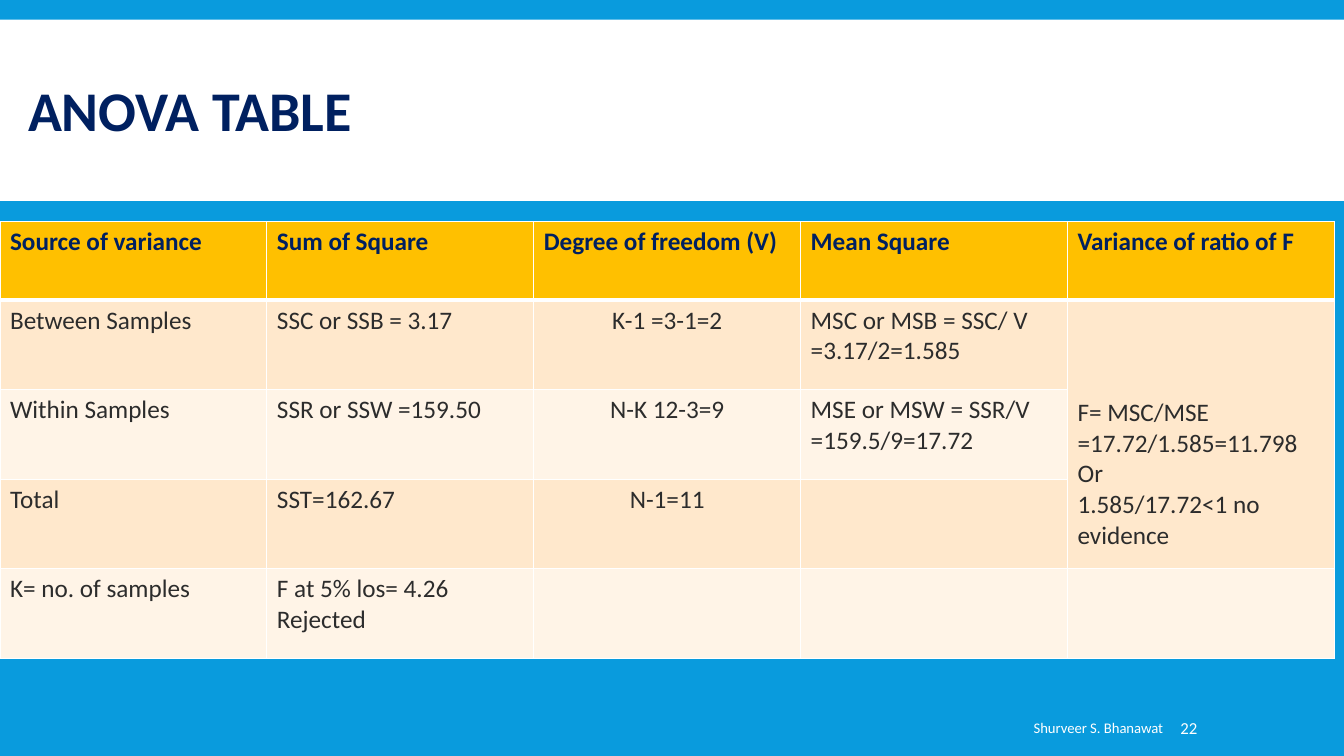
from lxml import etree
from pptx import Presentation
from pptx import util as u
from pptx.dml import color
from pptx.enum import shapes, text
from pptx.oxml import ns

Pt = u.Pt
LEFT, MID, RIGHT = text.PP_ALIGN.LEFT, text.PP_ALIGN.CENTER, text.PP_ALIGN.RIGHT

HEAD = ["Source of variance", "Sum of Square", "Degree of freedom (V)",
        "Mean Square", "Variance of ratio of F"]
BODY = [
    ["Between Samples", "SSC or SSB = 3.17", "K-1 =3-1=2",
     "MSC or MSB = SSC/ V\n=3.17/2=1.585",
     "F= MSC/MSE\n=17.72/1.585=11.798\nOr\n1.585/17.72<1 no evidence"],
    ["Within Samples", "SSR or SSW =159.50", "N-K 12-3=9",
     "MSE or MSW = SSR/V\n=159.5/9=17.72", ""],
    ["Total", "SST=162.67", "N-1=11", "", ""],
    ["K= no. of samples", "F at 5% los= 4.26 Rejected", "", "", ""],
]


def rgb(code):
    return color.RGBColor.from_string(code)


def write(frame, words, size=18, ink="2C2C2C", bold=False, align=LEFT, lead=None):
    """Fill a text frame, one paragraph per line of words."""
    frame.word_wrap = True
    for i, line in enumerate(words.split("\n")):
        para = frame.add_paragraph() if i else frame.paragraphs[0]
        para.alignment = align
        if lead:
            para.line_spacing = lead
        run = para.add_run() if line else para
        if line:
            run.text = line
        font = run.font
        font.name, font.size, font.bold = "Calibri", Pt(size), bold
        font.color.rgb = rgb(ink)


def edge(cell, base):
    """Draw white borders around a cell, the bottom one of width base."""
    props = cell._tc.get_or_add_tcPr()
    sides = [("lnL", 1), ("lnR", 1), ("lnT", 1), ("lnB", base)]
    for i, (tag, width) in enumerate(sides):
        line = etree.Element(ns.qn("a:" + tag), w=str(Pt(width)))
        fill = etree.SubElement(line, ns.qn("a:solidFill"))
        etree.SubElement(fill, ns.qn("a:srgbClr"), val="FFFFFF")
        props.insert(i, line)


class Deck:
    def __init__(self, back):
        self.file = Presentation()
        self.file.slide_width, self.file.slide_height = Pt(960), Pt(540)
        self.slide = self.file.slides.add_slide(self.file.slide_layouts[6])
        fill = self.slide.background.fill
        fill.solid()
        fill.fore_color.rgb = rgb(back)

    def band(self, x, y, w, h, code):
        band = self.slide.shapes.add_shape(
            shapes.MSO_SHAPE.RECTANGLE, Pt(x), Pt(y), Pt(w), Pt(h))
        band.shadow.inherit = False
        band.fill.solid()
        band.fill.fore_color.rgb = rgb(code)
        band.line.fill.background()

    def label(self, x, y, w, h, words, inset=7.2, **look):
        frame = self.slide.shapes.add_textbox(Pt(x), Pt(y), Pt(w), Pt(h)).text_frame
        frame.vertical_anchor = text.MSO_ANCHOR.MIDDLE
        frame.margin_left = Pt(inset)
        write(frame, words, **look)

    def table(self, x, y, wide, tall, rows):
        """Place a table with one column width and a list of row heights."""
        grid = self.slide.shapes.add_table(
            len(rows), len(rows[0]), Pt(x), Pt(y),
            Pt(wide * len(rows[0])), Pt(sum(tall))).table
        for col in grid.columns:
            col.width = Pt(wide)
        for r, row in enumerate(rows):
            grid.rows[r].height = Pt(tall[r])
            for c, words in enumerate(row):
                cell = grid.cell(r, c)
                cell.fill.solid()
                tint = "FFC000" if r == 0 else ("FFF4E7", "FFE8CC")[r % 2]
                cell.fill.fore_color.rgb = rgb(tint)
                edge(cell, 1 if r else 3)
                write(cell.text_frame, words, bold=r == 0,
                      ink="2C2C2C" if r else "002060",
                      align=MID if r and c == 2 else LEFT)
        return grid


def main():
    deck = Deck("099BDD")
    deck.band(0, 14, 960, 129.6, "FFFFFF")
    deck.label(13, 22.3, 852.5, 118.8, "ANOVA TABLE",
               size=40, ink="002060", bold=True, lead=0.85)
    grid = deck.table(0, 158.4, 190.65, [56] + [64] * 4, [HEAD] + BODY)
    ratio = grid.cell(1, 4)
    ratio.merge(grid.cell(3, 4))
    ratio.margin_top = Pt(69.5)
    deck.label(440.6, 505.4, 397.4, 28.8, "Shurveer S. Bhanawat",
               size=10.5, ink="FFFFFF", align=RIGHT)
    deck.label(839.5, 505.4, 74.2, 28.8, "22", inset=3.6, size=12, ink="FFFFFF")
    deck.file.save("out.pptx")


if __name__ == "__main__":
    main()
